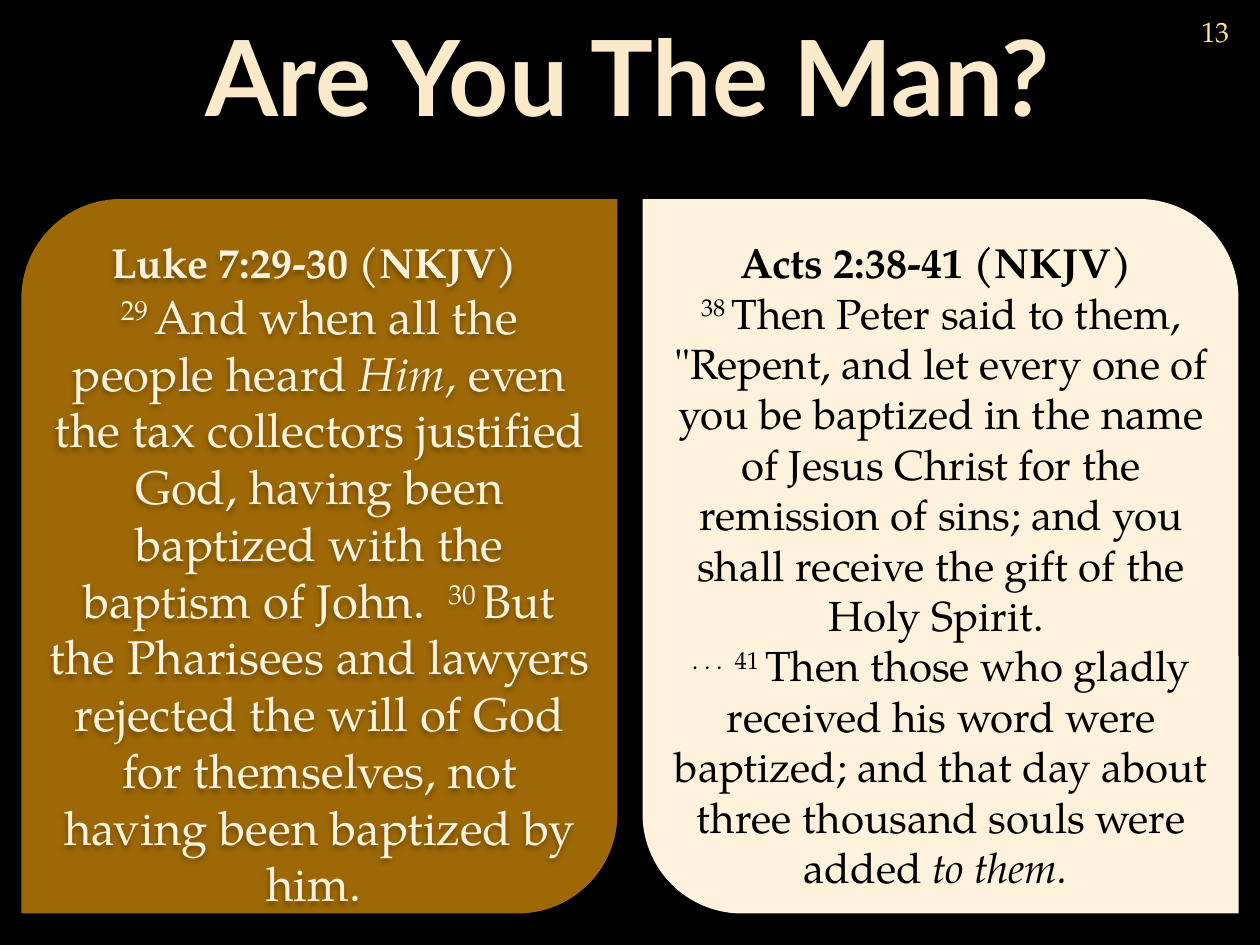
from pptx import Presentation
from pptx.dml.color import RGBColor
from pptx.enum.shapes import MSO_SHAPE
from pptx.enum.text import MSO_ANCHOR, MSO_AUTO_SIZE, PP_ALIGN
from pptx.oxml import parse_xml
from pptx.oxml.ns import nsdecls, qn
from pptx.util import Inches, Pt

BLACK, BROWN, CREAM = "000000", "9E6806", "FEF2DC"
TITLE_COLOR, NUMBER_COLOR = "FCEACB", "FFE693"
LINE_BREAK = "\n"


def color(hex_text):
    return RGBColor.from_string(hex_text)


def add_text(para, text, font="TeX Gyre Pagella", size=24, fill=BLACK,
             bold=False, italic=False, raised=False):
    span = para.add_run()
    span.text = text
    span.font.name = font
    span.font.size = Pt(size)
    span.font.color.rgb = color(fill)
    span.font.bold = bold
    span.font.italic = italic
    if raised:
        span.font._element.set("baseline", "30000")


def add_shadow(shape):
    shape.shadow.inherit = False
    effects = shape._element.spPr.find(qn("a:effectLst"))
    effects.append(parse_xml(
        f'<a:outerShdw {nsdecls("a")} blurRad="{Pt(3.5)}" dist="{Pt(2.2)}" '
        f'dir="5400000" rotWithShape="0"><a:srgbClr val="{BLACK}">'
        '<a:alpha val="32000"/></a:srgbClr></a:outerShdw>'))


class VerseSlide:
    def __init__(self, deck):
        self.page = deck.slides.add_slide(deck.slide_layouts[5])
        background = self.page.background.fill
        background.solid()
        background.fore_color.rgb = color(BLACK)

    def title(self, text, left, top, width, height):
        box = self.page.shapes.title
        box.left, box.top = Inches(left), Inches(top)
        box.width, box.height = Inches(width), Inches(height)
        frame = box.text_frame
        frame.auto_size = MSO_AUTO_SIZE.SHAPE_TO_FIT_TEXT
        frame.vertical_anchor = MSO_ANCHOR.TOP
        para = frame.paragraphs[0]
        para.alignment = PP_ALIGN.CENTER
        add_text(para, text, font="Lato", size=60, fill=TITLE_COLOR, bold=True)

    def panel(self, left, fill, corners):
        shape = self.page.shapes.add_shape(
            MSO_SHAPE.ROUND_2_DIAG_RECTANGLE,
            Inches(left), Inches(1.58), Inches(4.73), Inches(5.67))
        for index, radius in enumerate(corners):
            shape.adjustments[index] = radius
        shape.fill.solid()
        shape.fill.fore_color.rgb = color(fill)
        shape.line.fill.background()
        add_shadow(shape)

    def text_box(self, left, top, width, height):
        box = self.page.shapes.add_textbox(
            Inches(left), Inches(top), Inches(width), Inches(height))
        box.text_frame.word_wrap = True
        box.text_frame.paragraphs[0].alignment = PP_ALIGN.CENTER
        return box

    def passage(self, left, width, height, fill, size, heading, pieces):
        box = self.text_box(left, 1.83, width, height)
        box.text_frame.auto_size = MSO_AUTO_SIZE.SHAPE_TO_FIT_TEXT
        para = box.text_frame.paragraphs[0]
        add_text(para, heading, fill=fill, bold=True)
        para.add_line_break()
        for text, style in pieces:
            if text == LINE_BREAK:
                para.add_line_break()
            else:
                add_text(para, text, size=size, fill=fill, **style)
        return box

    def number(self, text):
        box = self.text_box(9.31, 0, 0.67, 0.5)
        frame = box.text_frame
        frame.margin_left = frame.margin_right = 0
        frame.margin_top = frame.margin_bottom = 0
        frame.vertical_anchor = MSO_ANCHOR.MIDDLE
        add_text(frame.paragraphs[0], text, size=16, fill=NUMBER_COLOR)


def main():
    deck = Presentation()
    deck.slide_width, deck.slide_height = Inches(10), Inches(7.5)
    slide = VerseSlide(deck)
    plain, raised, italic = {}, {"raised": True}, {"italic": True}

    # Mirrored panels
    slide.panel(0.17, BROWN, (0.16667, 0))
    slide.panel(5.1, CREAM, (0, 0.16667))

    # Title
    slide.title("Are You The Man?", 0.25, 0.04, 9.46, 1.11)

    # Left passage
    luke = slide.passage(0.27, 4.53, 5.05, CREAM, 27, "Luke 7:29-30 (NKJV) ", [
        ("29 ", raised),
        ("And when all the people heard ", plain),
        ("Him,", italic),
        (" even the tax collectors justified God, having been baptized "
         "with the baptism of John.  ", plain),
        ("30 ", raised),
        ("But the Pharisees and lawyers rejected the will of God for "
         "themselves, not having been baptized by him. ", plain),
    ])
    add_shadow(luke)

    # Right passage
    slide.passage(5.17, 4.6, 5.35, BLACK, 24, "Acts 2:38-41 (NKJV) ", [
        ("38 ", raised),
        ("Then Peter said to them, \"Repent, and let every one of you be "
         "baptized in the name of Jesus Christ for the remission of sins; "
         "and you shall receive the gift of the Holy Spirit. ", plain),
        (LINE_BREAK, plain),
        (". . .  41 ", raised),
        ("Then those who gladly received his word were baptized; and that "
         "day about three thousand souls were added ", plain),
        ("to them. ", italic),
    ])

    # Page number
    slide.number("13")

    deck.save("out.pptx")


if __name__ == "__main__":
    main()
